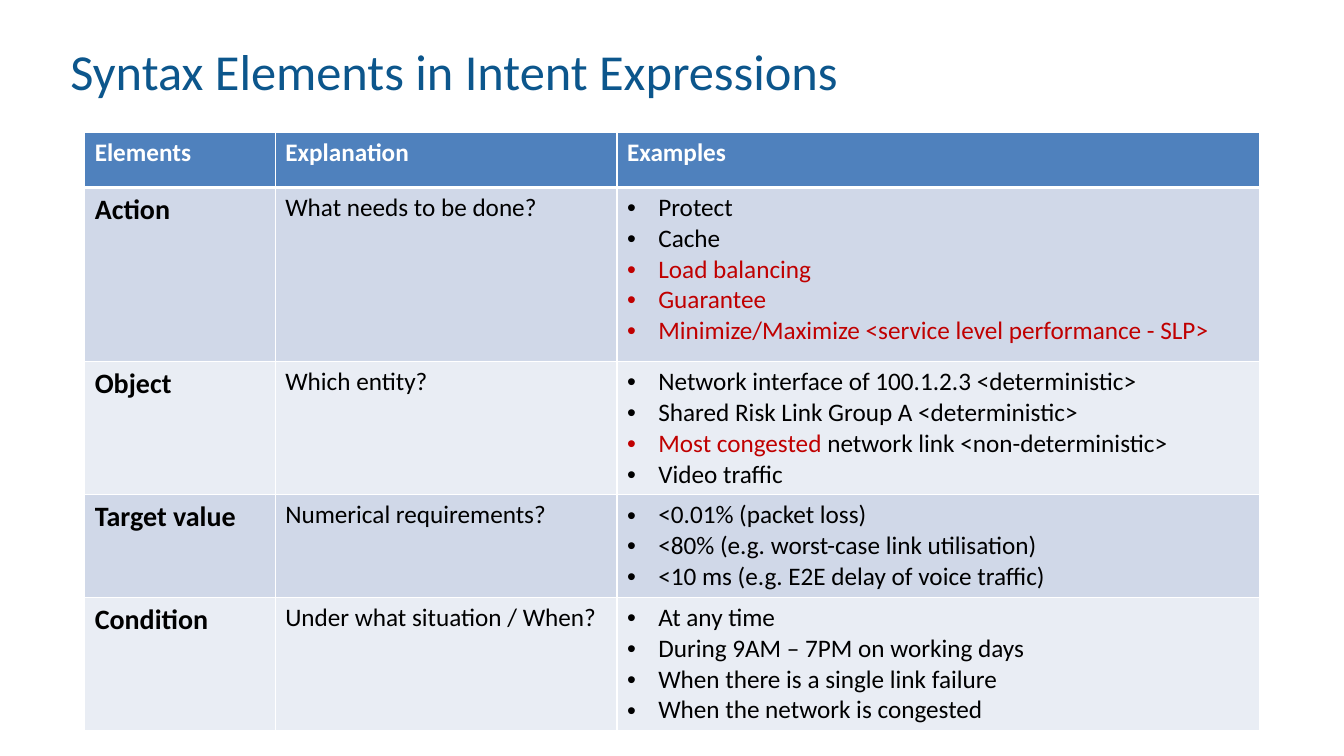
"""Build a slide with a table of the syntax elements in intent expressions."""
import pptx
import pptx.dml.color
import pptx.enum.text
import pptx.oxml
import pptx.oxml.ns
import pptx.util
from pptx.util import Inches

COLOURS = {
    "title": "0C568C", "header": "4F81BD", "odd": "D0D8E8", "even": "E9EDF4",
    "white": "FFFFFF", "black": "000000", "red": "C00000",
}
HEADER = {"size": 18, "bold": True, "colour": "white"}
ELEMENT = {"size": 20, "bold": True, "colour": "black"}
BODY = {"size": 18, "bold": False, "colour": "black"}
TITLE = {"size": 36, "bold": False, "colour": "title"}

COLUMN_WIDTHS = [1.89, 3.39, 6.37]
ROW_HEIGHTS = [0.55, 1.73, 1.32, 1.02, 1.32]
HEADINGS = ["Elements", "Explanation", "Examples"]
ROWS = [
    ("Action", "What needs to be done?", [
        [("Protect", "black")],
        [("Cache", "black")],
        [("Load balancing", "red")],
        [("Guarantee", "red")],
        [("Minimize/Maximize <service level performance - SLP>", "red")],
    ]),
    ("Object", "Which entity?", [
        [("Network interface of 100.1.2.3 <deterministic>", "black")],
        [("Shared Risk Link Group A <deterministic>", "black")],
        [("Most congested ", "red"), ("network link <non-deterministic>", "black")],
        [("Video traffic", "black")],
    ]),
    ("Target value", "Numerical requirements?", [
        [("<0.01% (packet loss)", "black")],
        [("<80% (e.g. worst-case link utilisation)", "black")],
        [("<10 ms (e.g. E2E delay of voice traffic)", "black")],
    ]),
    ("Condition", "Under what situation / When?", [
        [("At any time", "black")],
        [("During 9AM – 7PM on working days", "black")],
        [("When there is a single link failure", "black")],
        [("When the network is congested", "black")],
    ]),
]


def rgb(name):
    return pptx.dml.color.RGBColor.from_string(COLOURS[name])


def add_span(para, text, style):
    span = para.add_run()
    span.text = text
    values = {"name": "Calibri", "size": pptx.util.Pt(style["size"]), "bold": style["bold"]}
    for name, value in values.items():
        setattr(span.font, name, value)
    span.font.color.rgb = rgb(style["colour"])


def add_bullet(para):
    properties = para._p.get_or_add_pPr()
    properties.set("marL", str(Inches(0.31)))
    properties.set("indent", str(-Inches(0.31)))
    namespace = pptx.oxml.ns.nsdecls("a")
    for tag in ('buFont typeface="Arial"', 'buChar char="•"'):
        properties.append(pptx.oxml.parse_xml(f"<a:{tag} {namespace}/>"))


def add_title(page, text):
    box = page.shapes.add_textbox(Inches(0.6), Inches(0.13), Inches(9.76), Inches(1.26))
    frame = box.text_frame
    values = {"word_wrap": True, "vertical_anchor": pptx.enum.text.MSO_ANCHOR.MIDDLE}
    for name, value in values.items():
        setattr(frame, name, value)
    para = frame.paragraphs[0]
    para.line_spacing = pptx.util.Pt(35)
    add_span(para, text, TITLE)


def format_cell(cell, fill, top, bottom):
    properties = cell._tc.get_or_add_tcPr()
    for side, width in {"L": 1, "R": 1, "T": top, "B": bottom}.items():
        properties.append(pptx.oxml.parse_xml(
            f'<a:ln{side} {pptx.oxml.ns.nsdecls("a")} w="{pptx.util.Pt(width)}">'
            f'<a:solidFill><a:srgbClr val="{COLOURS["white"]}"/></a:solidFill></a:ln{side}>'))
    cell.fill.solid()
    cell.fill.fore_color.rgb = rgb(fill)


def fill_examples(cell, examples):
    frame = cell.text_frame
    for index, spans in enumerate(examples):
        para = frame.add_paragraph() if index else frame.paragraphs[0]
        add_bullet(para)
        for text, colour in spans:
            add_span(para, text, {**BODY, "colour": colour})


def add_syntax_table(page):
    table = page.shapes.add_table(
        len(ROW_HEIGHTS), len(COLUMN_WIDTHS), Inches(0.84), Inches(1.31),
        Inches(sum(COLUMN_WIDTHS)), Inches(sum(ROW_HEIGHTS))).table
    for column, width in zip(table.columns, COLUMN_WIDTHS):
        column.width = Inches(width)
    for index, height in enumerate(ROW_HEIGHTS):
        table.rows[index].height = Inches(height)
        fill = "header" if index == 0 else "odd" if index % 2 else "even"
        for cell in table.rows[index].cells:
            format_cell(cell, fill, 3 if index == 1 else 1, 3 if index == 0 else 1)
    for column, heading in enumerate(HEADINGS):
        add_span(table.cell(0, column).text_frame.paragraphs[0], heading, HEADER)
    for row, (element, explanation, examples) in enumerate(ROWS, 1):
        add_span(table.cell(row, 0).text_frame.paragraphs[0], element, ELEMENT)
        add_span(table.cell(row, 1).text_frame.paragraphs[0], explanation, BODY)
        fill_examples(table.cell(row, 2), examples)


def main():
    deck = pptx.Presentation()
    deck.slide_width, deck.slide_height = Inches(13.33), Inches(7.5)
    page = deck.slides.add_slide(deck.slide_layouts[6])
    add_title(page, "Syntax Elements in Intent Expressions")
    add_syntax_table(page)
    deck.save("out.pptx")


if __name__ == "__main__":
    main()
